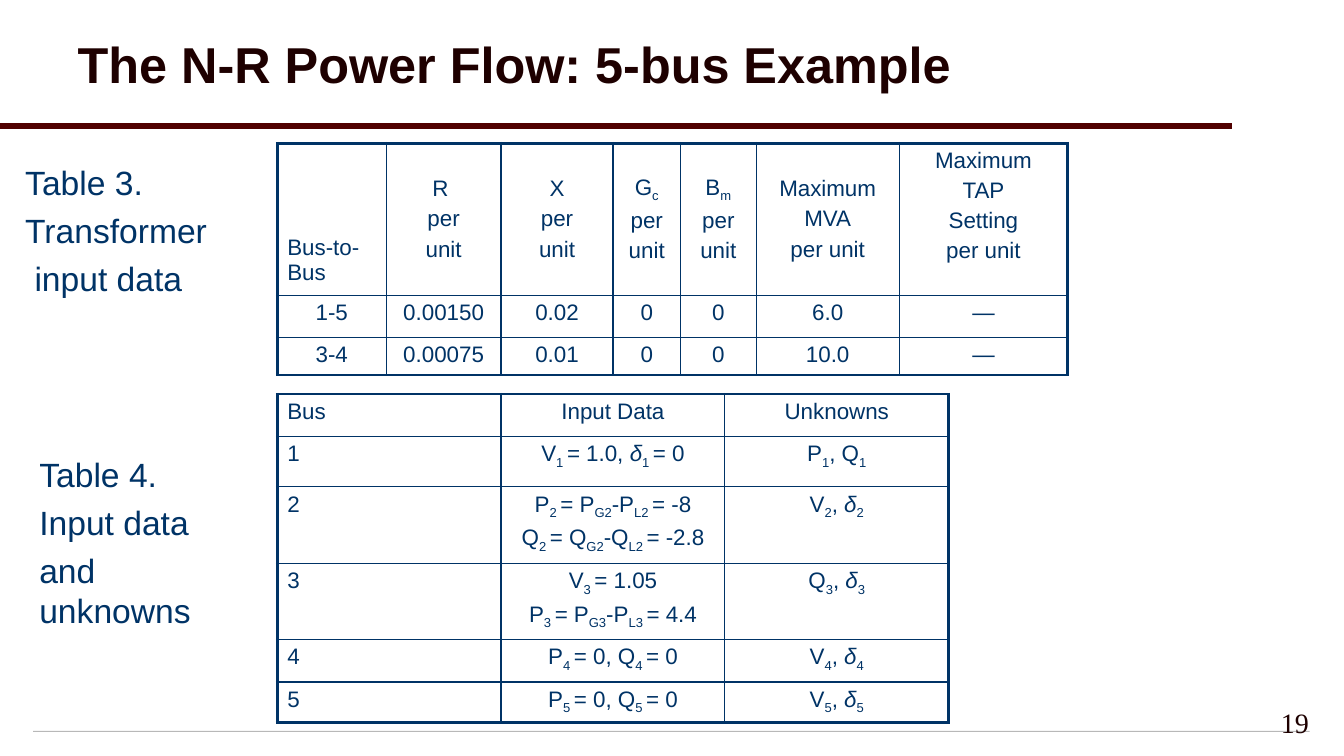
import itertools
from dataclasses import dataclass

import pptx
import pptx.dml.color
import pptx.enum.shapes
import pptx.enum.text
import pptx.oxml
import pptx.oxml.ns
import pptx.util
from pptx.util import Inches

ALIGN = pptx.enum.text.PP_ALIGN
ANCHOR = pptx.enum.text.MSO_ANCHOR


@dataclass(frozen=True)
class Theme:
    title_color: str = "1E0000"
    text_color: str = "003366"
    rule_color: str = "500000"
    footer_color: str = "B8B8B8"
    font: str = "Arial"
    number_font: str = "Times New Roman"
    title_size: int = 36
    label_size: int = 24
    number_size: int = 20
    cell_size: int = 16
    outer_border: float = 2.25
    inner_border: float = 1
    space_ratio: float = 0.23


THEME = Theme()

# A pair of ~ marks encloses a subscript; "/" in a header starts a new paragraph.
TRANSFORMER_ROWS = [
    ["Bus-to-Bus", "R /per/unit", "X/per/unit", "G~c~/per/unit", "B~m~/per/unit",
     "Maximum/MVA/per unit", "Maximum/TAP/Setting/per unit"],
    ["1-5", "0.00150", "0.02", "0", "0", "6.0", "—"],
    ["3-4", "0.00075", "0.01", "0", "0", "10.0", "—"],
]
BUS_ROWS = [
    ["Bus", "Input Data", "Unknowns"],
    ["1", "V~1 ~= 1.0, δ~1 ~= 0", "P~1~, Q~1~"],
    ["2", "P~2 ~= P~G2~-P~L2 ~= -8/Q~2 ~= Q~G2~-Q~L2 ~= -2.8", "V~2~, δ~2~"],
    ["3", "V~3 ~= 1.05/P~3 ~= P~G3~-P~L3 ~= 4.4", "Q~3~, δ~3~"],
    ["4", "P~4 ~= 0, Q~4 ~= 0", "V~4~, δ~4~"],
    ["5", "P~5 ~= 0, Q~5 ~= 0", "V~5~, δ~5~"],
]


def rgb(value):
    return pptx.dml.color.RGBColor.from_string(value)


def write_text(tf, text, size, color=THEME.text_color, font=THEME.font,
               bold=False, align=ALIGN.LEFT, line_spacing=None):
    """Fill a text frame: / parts paragraphs, a newline breaks a line."""
    for i, line in enumerate(text.split("/")):
        p = tf.add_paragraph() if i else tf.paragraphs[0]
        p.alignment = align
        if line_spacing:
            p.line_spacing = line_spacing
        if i:
            p.space_before = pptx.util.Pt(round(size * THEME.space_ratio, 1))
        for j, piece in enumerate(line.split("\n")):
            if j:
                p.add_line_break()
            for k, part in enumerate(piece.split("~")):
                # The angle symbol is set in italics
                for is_angle, chars in itertools.groupby(part, key=lambda c: c == "δ"):
                    r = p.add_run()
                    r.text = "".join(chars)
                    r.font.name = font
                    r.font.size = pptx.util.Pt(size)
                    r.font.color.rgb = rgb(color)
                    r.font.bold = bold
                    r.font.italic = is_angle
                    if k % 2:
                        r.font._element.set("baseline", "-25000")


def add_label(slide, left, top, width, height, text, margins=(0, 0),
              anchor=ANCHOR.TOP, **fmt):
    sp = slide.shapes.add_textbox(Inches(left), Inches(top), Inches(width), Inches(height))
    tf = sp.text_frame
    tf.word_wrap = False
    tf.vertical_anchor = anchor
    tf.margin_left = tf.margin_right = Inches(margins[0])
    tf.margin_top = tf.margin_bottom = Inches(margins[1])
    write_text(tf, text, **fmt)


def set_borders(cell, outer_sides):
    tcPr = cell._tc.get_or_add_tcPr()
    for i, side in enumerate("LRTB"):
        points = THEME.outer_border if side in outer_sides else THEME.inner_border
        tcPr.insert(i, pptx.oxml.parse_xml(
            f'<a:ln{side} {pptx.oxml.ns.nsdecls("a")} w="{pptx.util.Pt(points)}">'
            f'<a:solidFill><a:srgbClr val="{THEME.text_color}"/></a:solidFill>'
            f'</a:ln{side}>'))


def add_grid(slide, left, top, widths, heights, rows, left_cells):
    """Draw a bordered table; left_cells names the left-aligned texts."""
    frame = slide.shapes.add_table(len(rows), len(widths), Inches(left), Inches(top),
                                   Inches(sum(widths)), Inches(sum(heights)))
    table = frame.table
    table.first_row = table.horz_banding = False
    for col, width in zip(table.columns, widths):
        col.width = Inches(width)
    for row, height in zip(table.rows, heights):
        row.height = Inches(height)
    for i, row in enumerate(rows):
        for j, text in enumerate(row):
            cell = table.cell(i, j)
            cell.fill.background()
            edges = {"L": j == 0, "R": j == len(widths) - 1,
                     "T": i == 0, "B": i == len(rows) - 1}
            set_borders(cell, [side for side, is_outer in edges.items() if is_outer])
            align = ALIGN.LEFT if text in left_cells else ALIGN.CENTER
            write_text(cell.text_frame, text, THEME.cell_size, align=align)
    return table


def add_rules(slide):
    # Thick rule under the title
    line = slide.shapes.add_connector(pptx.enum.shapes.MSO_CONNECTOR.STRAIGHT,
                                      0, Inches(1.25), Inches(12.22), Inches(1.25))
    line.line.color.rgb = rgb(THEME.rule_color)
    line.line.width = pptx.util.Pt(4)
    line._element.spPr.append(
        pptx.oxml.parse_xml(f'<a:effectLst {pptx.oxml.ns.nsdecls("a")}/>'))
    # Thin footer bar
    bar = slide.shapes.add_shape(pptx.enum.shapes.MSO_SHAPE.RECTANGLE,
                                 Inches(0.33), Inches(7.25), Inches(12.66), Inches(0.01))
    bar.shadow.inherit = False
    bar.fill.solid()
    bar.fill.fore_color.rgb = rgb(THEME.footer_color)
    bar.line.fill.background()


def add_title(slide, text):
    sp = slide.shapes.title
    sp.left, sp.top, sp.width, sp.height = map(Inches, (0.67, 0.08, 12.22, 1.17))
    sp.text_frame.vertical_anchor = ANCHOR.MIDDLE
    write_text(sp.text_frame, text, THEME.title_size, color=THEME.title_color,
               bold=True, line_spacing=0.9)


def main():
    prs = pptx.Presentation()
    prs.slide_width, prs.slide_height = Inches(13.33), Inches(7.5)
    slide = prs.slides.add_slide(prs.slide_layouts[5])

    add_rules(slide)
    add_title(slide, "The N-R Power Flow: 5-bus Example")

    # Transformer data, with the header cells anchored by column
    table = add_grid(slide, 2.75, 1.42, [1.08, 1.14, 1.11, 0.67, 0.75, 1.42, 1.67],
                     [1.51, 0.42, 0.37], TRANSFORMER_ROWS, ["Bus-to-Bus"])
    for j in range(1, 6):
        table.cell(0, j).vertical_anchor = ANCHOR.MIDDLE
    table.cell(0, 0).vertical_anchor = ANCHOR.BOTTOM
    table.cell(0, 0).margin_bottom = Inches(0.1)
    add_label(slide, 0.25, 1.61, 1.82, 1.37, "Table 3./Transformer/ input data",
              size=THEME.label_size)

    # Input data and unknowns of each bus
    add_grid(slide, 2.75, 3.91, [2.22] * 3, [0.42, 0.5, 0.75, 0.75, 0.42, 0.4],
             BUS_ROWS, [row[0] for row in BUS_ROWS])
    add_label(slide, 0.39, 4.5, 1.59, 1.78, "Table 4./Input data/and \nunknowns",
              size=THEME.label_size)

    # Slide number
    add_label(slide, 11, 6.92, 2.08, 0.5, "19", margins=(0.1, 0.05),
              anchor=ANCHOR.MIDDLE, size=THEME.number_size, align=ALIGN.RIGHT,
              color=THEME.title_color, font=THEME.number_font)

    prs.save("out.pptx")


if __name__ == "__main__":
    main()
